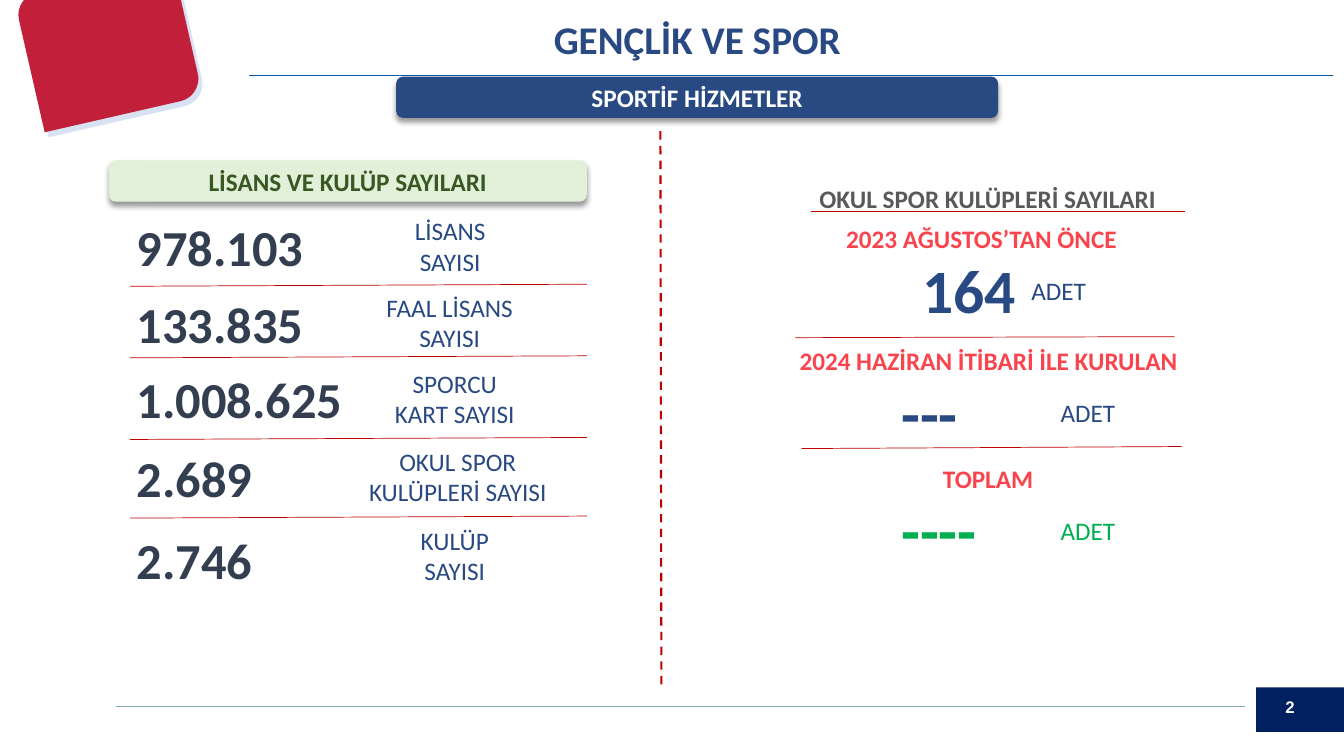
from dataclasses import dataclass
from typing import NamedTuple

from lxml.etree import SubElement
from pptx import Presentation
from pptx.dml.color import RGBColor as Rgb
from pptx.enum.dml import MSO_LINE as Dash
from pptx.enum.shapes import MSO_CONNECTOR as Link, MSO_SHAPE as Form
from pptx.enum.text import MSO_ANCHOR as Anchor, PP_ALIGN as Align
from pptx.oxml.ns import qn
from pptx.util import Inches, Pt


@dataclass(frozen=True)
class Theme:
    navy: str = "294983"
    slate: str = "333F50"
    red: str = "C00000"
    coral: str = "FA444D"
    green: str = "00B050"
    grey: str = "595959"
    white: str = "FFFFFF"
    mint: str = "E2F0D9"
    moss: str = "385723"
    crimson: str = "C21F3A"
    halo: str = "4472C4"
    dark: str = "002060"
    blue: str = "005AAA"
    teal: str = "81ABB8"
    font: str = "Calibri"
    plain: str = "Arial"
    title: int = 28
    body: int = 18
    figure: int = 36
    total: int = 44
    page: int = 12


class Box(NamedTuple):
    left: float
    top: float
    width: float
    height: float


class Rule(NamedTuple):
    x1: float
    y1: float
    x2: float
    y2: float
    color: str
    weight: float = 0.5
    dashed: bool = False


class Label(NamedTuple):
    box: Box
    lines: tuple[str, ...]
    color: str
    size: int = 18
    bold: bool = True
    align: Align = Align.CENTER
    font: str = "Calibri"


class Row(NamedTuple):
    top: float
    value: str
    label: Box
    lines: tuple[str, ...]


class Count(NamedTuple):
    value: Box
    text: str
    unit: Box
    color: str


T = Theme()
ROWS = [
    Row(2.09, "978.103", Box(3.53, 2.09, 1.87, 0.71), ("LİSANS", "SAYISI")),
    Row(2.86, "133.835", Box(3.70, 2.85, 1.52, 0.71), ("FAAL LİSANS", "SAYISI")),
    Row(3.60, "1.008.625", Box(3.75, 3.60, 1.52, 0.71), ("SPORCU KART SAYISI",)),
    Row(4.39, "2.689", Box(3.30, 4.38, 2.48, 0.71), ("OKUL SPOR", "KULÜPLERİ SAYISI")),
    Row(5.20, "2.746", Box(3.75, 5.16, 1.52, 0.71), ("KULÜP", "SAYISI")),
]
COUNTS = [
    Count(Box(9.05, 2.45, 1.3, 0.84), "164", Box(9.74, 2.68, 1.52, 0.4), T.navy),
    Count(Box(8.84, 3.67, 1.3, 0.84), "---", Box(10.03, 3.89, 1.52, 0.4), T.navy),
    Count(Box(8.84, 4.83, 1.3, 0.84), "----", Box(10.03, 5.06, 1.52, 0.4), T.green),
]
HEADS = [
    Label(Box(1.55, 0.1, 10.73, 0.57), ("GENÇLİK VE SPOR",), T.navy, T.title),
    Label(Box(7.64, 1.77, 4.31, 0.4), ("OKUL SPOR KULÜPLERİ SAYILARI",), T.grey),
    Label(Box(8.18, 2.17, 3.11, 0.4), ("2023 AĞUSTOS’TAN ÖNCE",), T.coral),
    Label(Box(7.7, 3.38, 4.21, 0.4), ("2024 HAZİRAN İTİBARİ İLE KURULAN",), T.coral),
    Label(Box(9.05, 4.55, 1.5, 0.4), ("TOPLAM",), T.coral),
]
RULES = [
    Rule(6.56, 6.79, 6.55, 1.28, T.red, 1.5, True),
    Rule(8.04, 2.10, 11.75, 2.10, T.red),
    Rule(7.89, 3.35, 11.65, 3.34, T.red),
    Rule(7.95, 4.45, 11.72, 4.43, T.red),
    *(Rule(1.29, y, 5.82, y - 0.02, T.red) for y in (2.84, 3.55, 4.36, 5.14)),
]


def write(frame, item: Label) -> None:
    frame.word_wrap = True
    for i, line in enumerate(item.lines):
        para = frame.paragraphs[0] if i == 0 else frame.add_paragraph()
        para.alignment = item.align
        run = para.add_run()
        run.text = line
        font = run.font
        font.name, font.size, font.bold = item.font, Pt(item.size), item.bold
        font.color.rgb = Rgb.from_string(item.color)


def add_label(slide, item: Label) -> None:
    write(slide.shapes.add_textbox(*map(Inches, item.box)).text_frame, item)


def add_rule(slide, rule: Rule) -> None:
    ends = map(Inches, rule[:4])
    line = slide.shapes.add_connector(Link.STRAIGHT, *ends)
    line.line.color.rgb = Rgb.from_string(rule.color)
    line.line.width = Pt(rule.weight)
    if rule.dashed:
        line.line.dash_style = Dash.DASH
    SubElement(line._element.spPr, qn("a:effectLst"))


def add_form(shapes, form: Form, box: Box, color: str):
    shape = shapes.add_shape(form, *map(Inches, box))
    shape.shadow.inherit = False
    shape.fill.solid()
    shape.fill.fore_color.rgb = Rgb.from_string(color)
    shape.line.fill.background()
    return shape


def set_alpha(color, share: int) -> None:
    SubElement(color, qn("a:alpha"), val=str(share * 1000))


def add_banner(slide, item: Label, fill: str) -> None:
    shape = add_form(slide.shapes, Form.ROUNDED_RECTANGLE, item.box, fill)
    shape.text_frame.vertical_anchor = Anchor.MIDDLE
    write(shape.text_frame, item)
    # Soft shadow straight below
    effects = shape._element.spPr.find(qn("a:effectLst"))
    shade = SubElement(effects, qn("a:outerShdw"), blurRad=str(Pt(4)),
                       dist=str(Pt(3)), dir="5400000", algn="t", rotWithShape="0")
    set_alpha(SubElement(shade, qn("a:srgbClr"), val="000000"), 40)


def add_frame(slide) -> None:
    # Footer and page number
    add_rule(slide, Rule(1.15, 7.01, 12.35, 7.01, T.teal, 0.75))
    add_form(slide.shapes, Form.RECTANGLE, Box(12.46, 6.82, 0.87, 0.44), T.dark)
    add_label(slide, Label(Box(12.65, 6.86, 0.6, 0.3), ("2",), T.white, T.page,
                           align=Align.LEFT, font=T.plain))
    # Header line and tilted corner
    add_rule(slide, Rule(2.47, 0.75, 13.22, 0.75, T.blue, 1))
    corner = slide.shapes.add_group_shape().shapes
    tiles = [add_form(corner, Form.ROUND_2_DIAG_RECTANGLE, box, color)
             for box, color in ((Box(0.31, -0.17, 1.61, 1.37), T.halo),
                                (Box(0.27, -0.22, 1.61, 1.37), T.crimson))]
    for tile in tiles:
        tile.rotation = 347.1
    set_alpha(tiles[0]._element.spPr.find(".//" + qn("a:srgbClr")), 20)


def main() -> None:
    deck = Presentation()
    deck.slide_width, deck.slide_height = Inches(13.33), Inches(7.5)
    slide = deck.slides.add_slide(deck.slide_layouts[6])
    add_frame(slide)
    # Banners
    add_banner(slide, Label(Box(3.93, 0.76, 5.97, 0.41), ("SPORTİF HİZMETLER",), T.white), T.navy)
    add_banner(slide, Label(Box(1.08, 1.59, 4.74, 0.41), ("LİSANS VE KULÜP SAYILARI",), T.moss), T.mint)
    # Dividers and headings
    for rule in RULES:
        add_rule(slide, rule)
    for head in HEADS:
        add_label(slide, head)
    # Left figures
    for row in ROWS:
        add_label(slide, Label(Box(1.26, row.top, 2.4, 0.71), (row.value,),
                               T.slate, T.figure, align=Align.LEFT))
        add_label(slide, Label(row.label, row.lines, T.navy, T.body, False))
    # Right counts
    for count in COUNTS:
        add_label(slide, Label(count.value, (count.text,), count.color, T.total,
                               align=Align.LEFT))
        add_label(slide, Label(count.unit, ("ADET",), count.color, T.body, False))
    deck.save("out.pptx")


if __name__ == "__main__":
    main()
